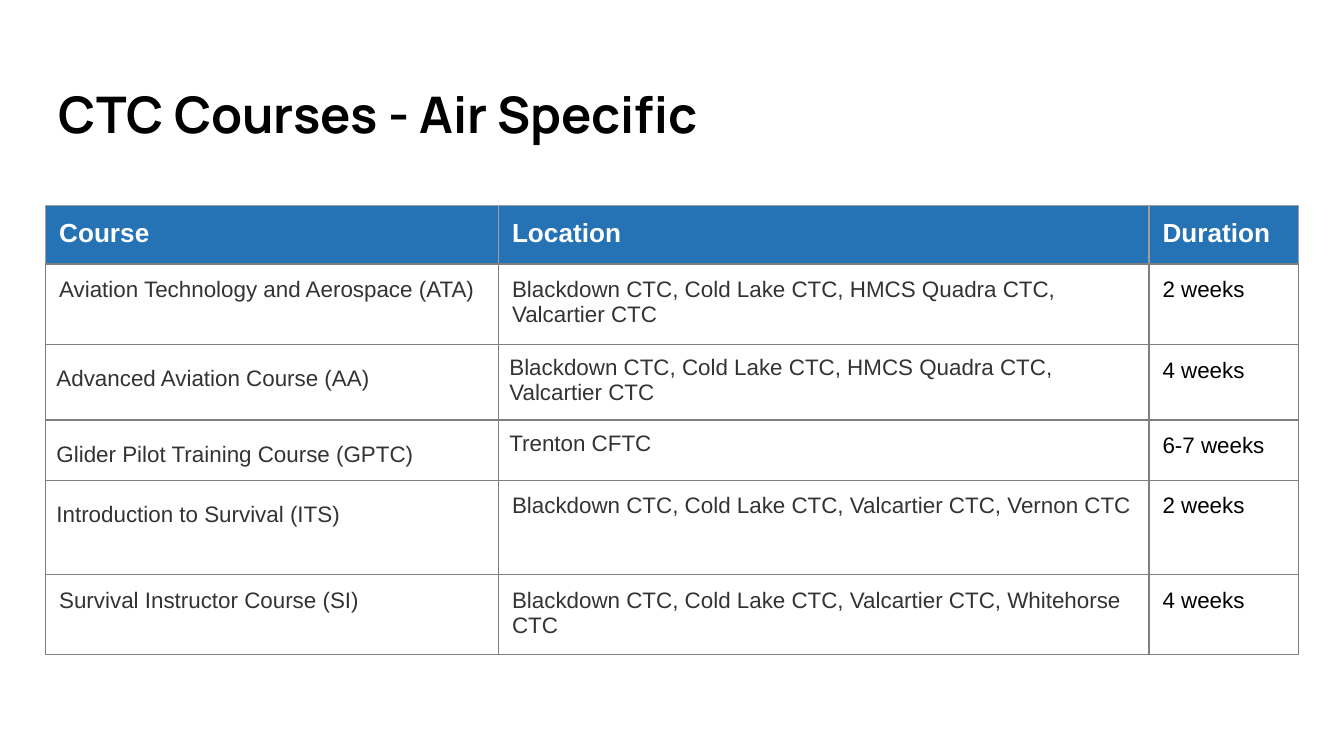
"""Build a slide with a table of air courses."""
from lxml import etree
from pptx import Presentation
from pptx.dml.color import RGBColor
from pptx.enum import text as t
from pptx.oxml import ns
from pptx.util import Inches, Pt

BLACK = RGBColor(0, 0, 0)
WHITE = RGBColor(255, 255, 255)
GREY = RGBColor(0x33, 0x33, 0x33)
BLUE = RGBColor(0x25, 0x72, 0xB4)
RULE = RGBColor(0x7F, 0x7F, 0x7F)
PALE = RGBColor(0x9E, 0x9E, 0x9E)

TITLE = "CTC Courses - Air Specific"
HEAD = ("Course", "Location", "Duration")
BASE = "Blackdown CTC, Cold Lake CTC, "
ROWS = [
    ("Aviation Technology and Aerospace (ATA)", BASE + "HMCS Quadra CTC, Valcartier CTC", "2 weeks"),
    ("Advanced Aviation Course (AA)", BASE + "HMCS Quadra CTC, Valcartier CTC", "4 weeks"),
    ("Glider Pilot Training Course (GPTC)", "Trenton CFTC", "6-7 weeks"),
    ("Introduction to Survival (ITS)", BASE + "Valcartier CTC, Vernon CTC", "2 weeks"),
    ("Survival Instructor Course (SI)", BASE + "Valcartier CTC, Whitehorse CTC", "4 weeks"),
]
WIDTHS = (3.37, 4.84, 1.11)
HEIGHTS = (0.42, 0.42, 0.42, 0.42, 0.7, 0.42)
TIGHT = {(2, 0), (2, 1), (3, 0), (3, 1), (4, 0)}
LOOSE = {(2, 0): 9, (3, 0): 9, (4, 0): 0}


def pad(box, size):
    box.margin_left = box.margin_right = Inches(size)
    box.margin_top = box.margin_bottom = Inches(size)


def write(para, words, size, color, bold, face="Arial"):
    run = para.add_run()
    run.text = words
    font = run.font
    font.name, font.size, font.bold = face, Pt(size), bold
    font.color.rgb = color


def edge(cell, side, color):
    props = cell._tc.get_or_add_tcPr()
    line = etree.SubElement(props, ns.qn("a:ln" + side), w=str(Pt(0.75)))
    fill = etree.SubElement(line, ns.qn("a:solidFill"))
    etree.SubElement(fill, ns.qn("a:srgbClr"), val=str(color))


def fill_cell(cell, row, col, words):
    head = row == 0
    pad(cell, 0.08 if (row, col) in TIGHT else 0.1)
    for side in "LRTB":
        edge(cell, side, PALE if head and side != "B" else RULE)
    if head:
        cell.fill.solid()
        cell.fill.fore_color.rgb = BLUE
    else:
        cell.fill.background()
    para = cell.text_frame.paragraphs[0]
    if (row, col) in LOOSE:
        para.line_spacing = 1.44
        para.space_after = Pt(LOOSE[row, col])
    color = WHITE if head else BLACK if col == 2 else GREY
    write(para, words, 14 if head else 12, color, head)


def main():
    deck = Presentation()
    deck.slide_width = Inches(10)
    deck.slide_height = deck.slide_width * 9 // 16
    slide = deck.slides.add_slide(deck.slide_layouts[6])

    title = slide.shapes.add_textbox(Inches(0.34), Inches(0.49), Inches(9.32), Inches(0.68))
    frame = title.text_frame
    frame.word_wrap = True
    frame.vertical_anchor = t.MSO_ANCHOR.BOTTOM
    pad(frame, 0.1)
    write(frame.paragraphs[0], TITLE, 27, BLACK, True, "Manrope")

    data = [HEAD, *ROWS]
    table = slide.shapes.add_table(
        len(data), len(HEAD), Inches(0.34), Inches(1.53),
        Inches(sum(WIDTHS)), Inches(sum(HEIGHTS))).table
    table.horz_banding = False
    for col, width in zip(table.columns, WIDTHS):
        col.width = Inches(width)
    for row, height in zip(table.rows, HEIGHTS):
        row.height = Inches(height)
    for r, row in enumerate(data):
        for c, words in enumerate(row):
            fill_cell(table.cell(r, c), r, c, words)
    deck.save("out.pptx")


if __name__ == "__main__":
    main()
